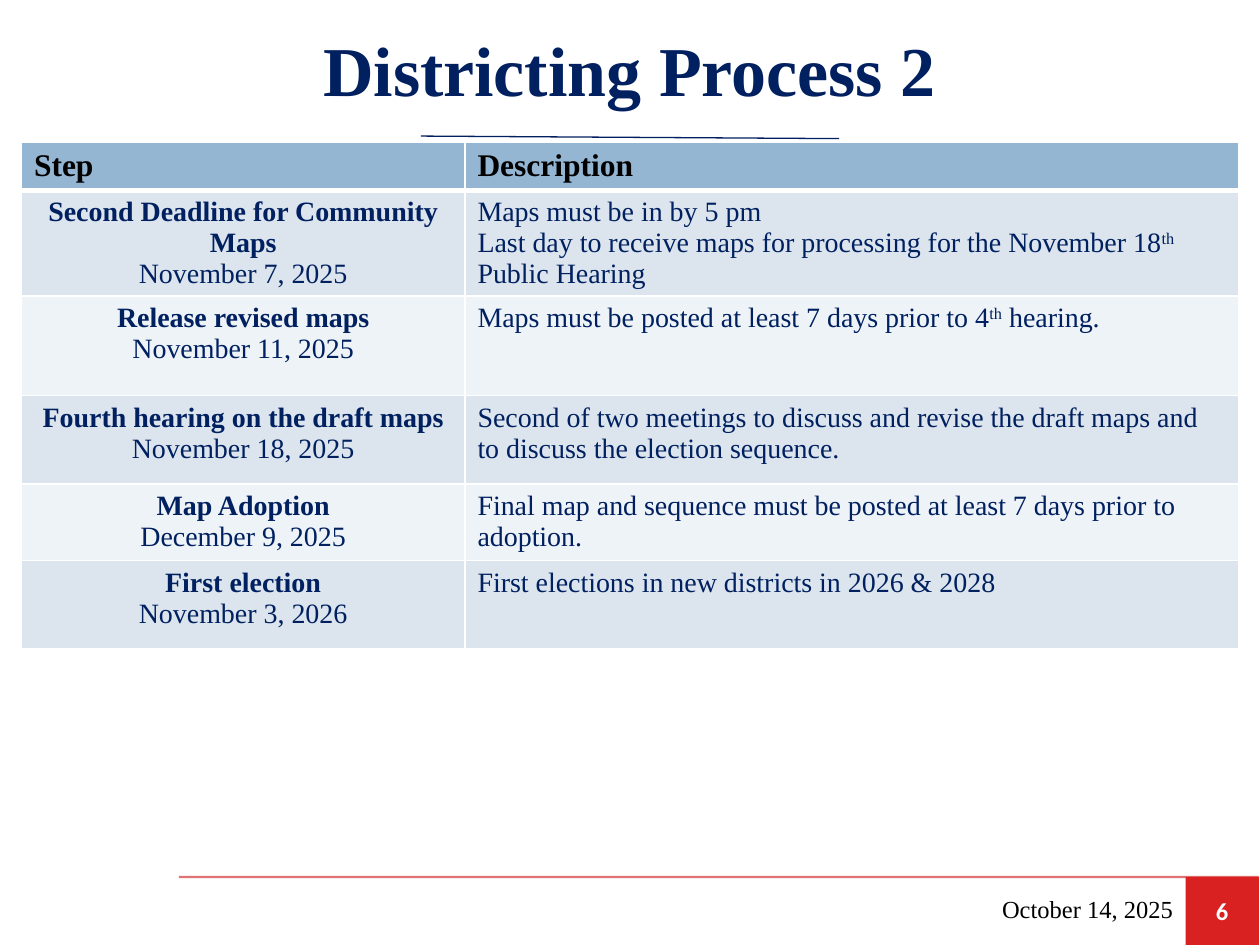
"""Build the "Districting Process 2" slide with its schedule table and footer."""

from lxml.etree import SubElement
from pptx import Presentation
from pptx.dml.color import RGBColor
from pptx.enum.shapes import MSO_CONNECTOR, MSO_SHAPE
from pptx.enum.text import MSO_ANCHOR, PP_ALIGN
from pptx.oxml.ns import qn
from pptx.util import Pt

COLORS = {
    "navy": "002060", "black": "000000", "white": "FFFFFF", "red": "D92121",
    "rule": "C80000", "header": "94B6D2", "odd": "DCE5EE", "even": "EEF3F7",
}
STEPS = [
    ("Second Deadline for Community Maps", "November 7, 2025",
     [["Maps must be in by 5 pm"],
      ["Last day to receive maps for processing for the November 18", "th", " Public Hearing"]]),
    ("Release revised maps", "November 11, 2025",
     [["Maps must be posted at least 7 days prior to 4", "th", " hearing."]]),
    ("Fourth hearing on the draft maps", "November 18, 2025",
     [["Second of two meetings to discuss and revise the draft maps and to discuss the election sequence."]]),
    ("Map Adoption", "December 9, 2025",
     [["Final map and sequence must be posted at least 7 days prior to adoption."]]),
    ("First election", "November 3, 2026",
     [["First elections in new districts in 2026 & 2028"]]),
]


def write(para, text, size=16, color="navy", bold=False, align=PP_ALIGN.LEFT,
          font="Times New Roman", raised=False):
    para.alignment = align
    span = para.add_run()
    span.text = text
    span.font.name = font
    span.font.size = Pt(size)
    span.font.bold = bold
    span.font.color.rgb = RGBColor.from_string(COLORS[color])
    if raised:
        span.font._element.set("baseline", "30000")


def draw_line(page, ends, color, width):
    line = page.shapes.add_connector(MSO_CONNECTOR.STRAIGHT, *map(Pt, ends))
    line.line.color.rgb = RGBColor.from_string(COLORS[color])
    line.line.width = Pt(width)
    SubElement(line._element.spPr, qn("a:effectLst"))
    return line


deck = Presentation()
deck.slide_width, deck.slide_height = Pt(720), Pt(540)
page = deck.slides.add_slide(deck.slide_layouts[5])

footer_rule = draw_line(page, (102.24, 501.12, 719.28, 501.12), "rule", 1.25)
rule_color = footer_rule._element.spPr.find(".//" + qn("a:srgbClr"))
SubElement(rule_color, qn("a:alpha"), val="55000")

number_box = page.shapes.add_shape(MSO_SHAPE.RECTANGLE, Pt(677.5), Pt(501.12), Pt(41.8), Pt(38.88))
number_box.shadow.inherit = False
number_box.fill.solid()
number_box.fill.fore_color.rgb = RGBColor.from_string(COLORS["red"])
number_box.line.fill.background()
number_box.text_frame.vertical_anchor = MSO_ANCHOR.MIDDLE
write(number_box.text_frame.paragraphs[0], "6", size=14, color="white", bold=True,
      align=PP_ALIGN.CENTER, font="Calibri")

title = page.shapes.title
title.left, title.top, title.width, title.height = Pt(26.64), Pt(0), Pt(666), Pt(77.76)
title.text_frame.vertical_anchor = MSO_ANCHOR.MIDDLE
write(title.text_frame.paragraphs[0], "Districting Process 2", size=40, bold=True,
      align=PP_ALIGN.CENTER)
draw_line(page, (240.5, 77.76, 479.5, 79.2), "navy", 0.75)

row_heights = [27.36, 56.88, 56.88, 50.4, 43.92, 50.4]
table = page.shapes.add_table(len(row_heights), 2, Pt(12.24), Pt(81.36), Pt(695.52),
                              Pt(sum(row_heights))).table
for column, width in zip(table.columns, (253.44, 442.08)):
    column.width = Pt(width)
for row, height in zip(table.rows, row_heights):
    row.height = Pt(height)

for index, row in enumerate(table.rows):
    fill = "header" if index == 0 else "odd" if index % 2 else "even"
    heavy_side = {0: "lnB", 1: "lnT"}.get(index)
    for cell in row.cells:
        for side in ("lnL", "lnR", "lnT", "lnB"):
            width = Pt(3 if side == heavy_side else 1)
            border = SubElement(cell._tc.get_or_add_tcPr(), qn(f"a:{side}"), w=str(width))
            SubElement(SubElement(border, qn("a:solidFill")), qn("a:srgbClr"), val=COLORS["white"])
        cell.fill.solid()
        cell.fill.fore_color.rgb = RGBColor.from_string(COLORS[fill])

for column, heading in enumerate(("Step", "Description")):
    write(table.cell(0, column).text_frame.paragraphs[0], heading, size=18, color="black", bold=True)
for index, (step, date, description) in enumerate(STEPS, start=1):
    step_frame = table.cell(index, 0).text_frame
    write(step_frame.paragraphs[0], step, bold=True, align=PP_ALIGN.CENTER)
    write(step_frame.add_paragraph(), date, align=PP_ALIGN.CENTER)
    description_frame = table.cell(index, 1).text_frame
    for number, pieces in enumerate(description):
        para = description_frame.add_paragraph() if number else description_frame.paragraphs[0]
        for piece in pieces:
            write(para, piece, raised=piece == "th")

date_box = page.shapes.add_textbox(Pt(467.28), Pt(504.72), Pt(210.24), Pt(28.8))
date_box.text_frame.word_wrap = True
date_box.text_frame.vertical_anchor = MSO_ANCHOR.MIDDLE
write(date_box.text_frame.paragraphs[0], "October 14, 2025", size=14, color="black",
      align=PP_ALIGN.RIGHT)

deck.save("out.pptx")
